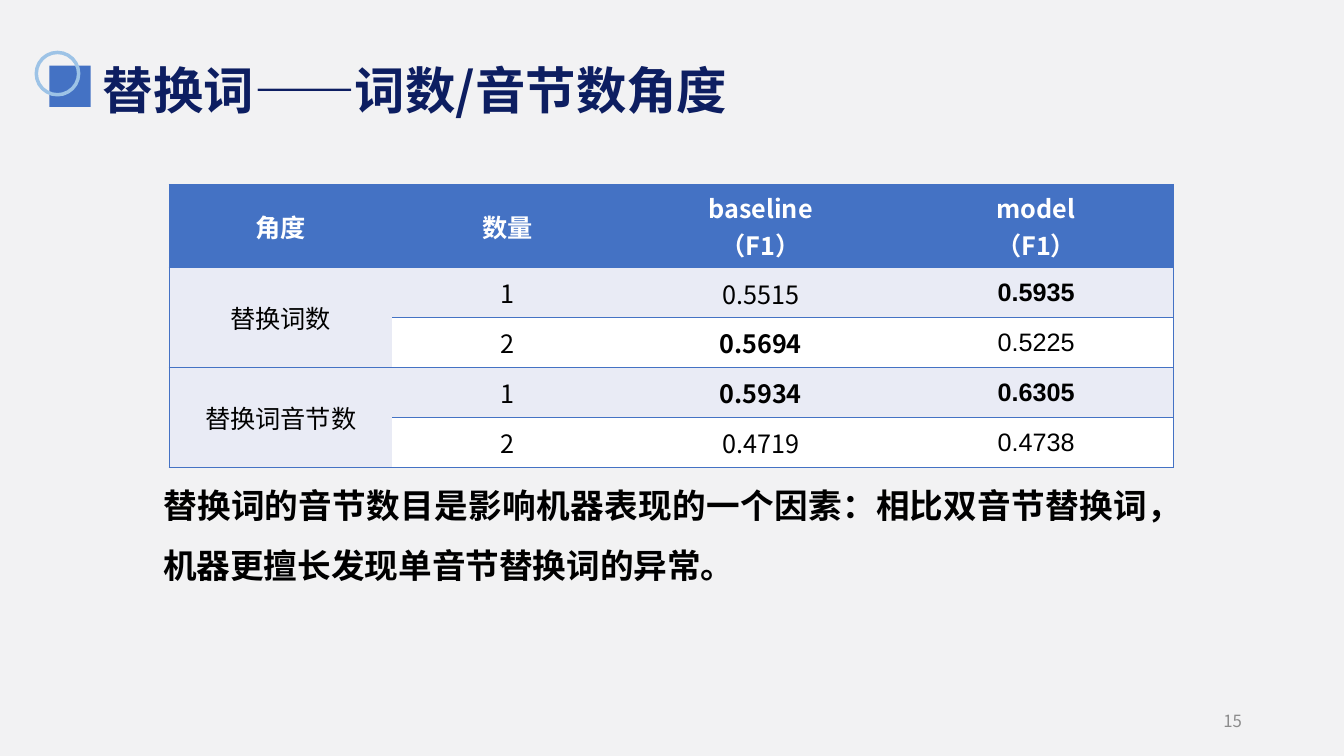
"""Build the slide on replacement words by word and syllable count."""
from dataclasses import dataclass

import lxml.etree
import pptx
import pptx.dml.color
import pptx.enum.shapes
import pptx.enum.text
import pptx.oxml.ns
import pptx.util

ALIGN = pptx.enum.text.PP_ALIGN
SHAPE = pptx.enum.shapes.MSO_SHAPE
QN = pptx.oxml.ns.qn


@dataclass(frozen=True)
class Theme:
    """Colours, fonts and type sizes of the slide."""
    background: str = "F2F2F3"
    accent: str = "4472C4"
    ring: str = "9DC3E6"
    heading: str = "0D1E61"
    muted: str = "8C8C8C"
    band: str = "E9EBF5"
    white: str = "FFFFFF"
    black: str = "000000"
    sans: str = "Noto Sans CJK SC"
    figures: str = "Arial"
    title_size: int = 36
    note_size: int = 24
    table_size: int = 18
    number_size: int = 12


def colour(value):
    """Turn a hexadecimal value into a colour."""
    return pptx.dml.color.RGBColor.from_string(value)


class Page:
    """One slide on a grid of 160 columns and 90 rows."""

    def __init__(self, deck, theme):
        """Add a slide with a title placeholder and a plain background."""
        self.theme = theme
        self.column = deck.slide_width / 160
        self.row = deck.slide_height / 90
        self.slide = deck.slides.add_slide(deck.slide_layouts[5])
        fill = self.slide.background.fill
        fill.solid()
        fill.fore_color.rgb = colour(theme.background)

    def place(self, left, top, width, height):
        """Convert grid units to slide lengths."""
        return (int(left * self.column), int(top * self.row),
                int(width * self.column), int(height * self.row))

    def fill_text(self, frame, lines, size, ink, bold=False, font=None,
                  align=ALIGN.LEFT, spacing=1.0):
        """Set each line as a paragraph holding one run."""
        frame.word_wrap = True
        frame.vertical_anchor = pptx.enum.text.MSO_ANCHOR.MIDDLE
        for index, line in enumerate(lines):
            para = frame.add_paragraph() if index else frame.paragraphs[0]
            para.alignment = align
            para.line_spacing = spacing
            span = para.add_run()
            span.text = line
            span.font.size = pptx.util.Pt(size)
            span.font.bold = bold
            span.font.color.rgb = colour(ink)
            span.font.name = font or self.theme.sans
            east = lxml.etree.SubElement(span.font._element, QN("a:ea"))
            east.set("typeface", self.theme.sans)

    def title(self, text, *area):
        """Move and fill the title placeholder."""
        box = self.slide.shapes.title
        box.left, box.top, box.width, box.height = self.place(*area)
        box.text_frame.auto_size = pptx.enum.text.MSO_AUTO_SIZE.NONE
        self.fill_text(box.text_frame, [text], self.theme.title_size,
                       self.theme.heading, bold=True, spacing=0.9)

    def shape(self, kind, *area, fill=None, line=None, weight=1):
        """Add a flat preset shape."""
        shape = self.slide.shapes.add_shape(kind, *self.place(*area))
        shape.shadow.inherit = False
        for part, value in ((shape.fill, fill), (shape.line.fill, line)):
            if value:
                part.solid()
                part.fore_color.rgb = colour(value)
            else:
                part.background()
        if line:
            shape.line.width = pptx.util.Pt(weight)
        return shape

    def note(self, text, *area):
        """Add the conclusion in an unfilled rounded box."""
        box = self.shape(SHAPE.ROUNDED_RECTANGLE, *area)
        box.adjustments[0] = 0
        frame = box.text_frame
        frame.margin_top = frame.margin_bottom = pptx.util.Inches(0.2)
        self.fill_text(frame, [text], self.theme.note_size, self.theme.black,
                       bold=True, align=ALIGN.JUSTIFY, spacing=1.5)

    def number(self, text, *area):
        """Add the page number."""
        box = self.slide.shapes.add_textbox(*self.place(*area))
        self.fill_text(box.text_frame, [text], self.theme.number_size,
                       self.theme.muted, align=ALIGN.RIGHT)

    def borders(self, cell, visible):
        """Draw the named cell edges and clear the others."""
        properties = cell._tc.get_or_add_tcPr()
        for index, edge in enumerate("LRTB"):
            line = lxml.etree.Element(QN(f"a:ln{edge}"))
            if edge in visible:
                line.set("w", str(pptx.util.Pt(1)))
                solid = lxml.etree.SubElement(line, QN("a:solidFill"))
                lxml.etree.SubElement(solid, QN("a:srgbClr")).set("val", self.theme.accent)
            else:
                lxml.etree.SubElement(line, QN("a:noFill"))
            properties.insert(index, line)

    def table(self, records, best, left, top, widths, heights):
        """Add the score table, with the cells listed in best in bold."""
        theme = self.theme
        area = self.place(left, top, sum(widths), sum(heights))
        grid = self.slide.shapes.add_table(len(heights), len(widths), *area).table
        for column, width in zip(grid.columns, widths):
            column.width = int(width * self.column)
        for row, height in zip(grid.rows, heights):
            row.height = int(height * self.row)
        last = len(widths) - 1
        for y, record in enumerate(records):
            for x, text in enumerate(record):
                cell = grid.cell(y, x)
                header = y == 0
                shaded = x == 0 or y % 2 == 1
                cell.fill.solid()
                cell.fill.fore_color.rgb = colour(
                    theme.accent if header else theme.band if shaded else theme.white)
                self.borders(cell, "TB" + "L" * (x == 0) + "R" * (x == last))
                if not header and x != 1:
                    cell.margin_left = cell.margin_right = pptx.util.Inches(0.01)
                    cell.margin_top = pptx.util.Inches(0.01)
                    cell.margin_bottom = 0
                cell.vertical_anchor = pptx.enum.text.MSO_ANCHOR.MIDDLE
                if text:
                    self.fill_text(cell.text_frame, text.split("\n"), theme.table_size,
                                   theme.white if header else theme.black,
                                   bold=header or (y, x) in best, align=ALIGN.CENTER,
                                   font=theme.figures if x == last and not header else None)
        for y in range(1, len(heights), 2):
            grid.cell(y, 0).merge(grid.cell(y + 1, 0))


def main():
    """Build and save the deck."""
    deck = pptx.Presentation()
    deck.slide_width = pptx.util.Inches(13.33)
    deck.slide_height = pptx.util.Inches(7.5)
    theme = Theme()
    page = Page(deck, theme)
    page.shape(SHAPE.RECTANGLE, 5.88, 7.8, 4.92, 4.92, fill=theme.accent)
    page.shape(SHAPE.OVAL, 4.32, 6.24, 5.04, 5.04, line=theme.ring, weight=2.5)
    page.title("替换词——词数/音节数角度", 11.04, 7.56, 138, 7.08)
    page.number("15", 113.04, 83.4, 36, 4.8)
    records = [
        ("角度", "数量", "baseline\n（F1）", "model\n（F1）"),
        ("替换词数", "1", "0.5515", "0.5935"),
        ("", "2", "0.5694", "0.5225"),
        ("替换词音节数", "1", "0.5934", "0.6305"),
        ("", "2", "0.4719", "0.4738"),
    ]
    page.table(records, {(1, 3), (2, 2), (3, 2), (3, 3)}, 20.16, 21.96,
               [26.52, 27.48, 32.8, 32.8], [9.9] + [5.94] * 4)
    page.note("替换词的音节数目是影响机器表现的一个因素：相比双音节替换词，"
              "机器更擅长发现单音节替换词的异常。", 18.24, 53.28, 123.6, 18.48)
    deck.save("out.pptx")


if __name__ == "__main__":
    main()
